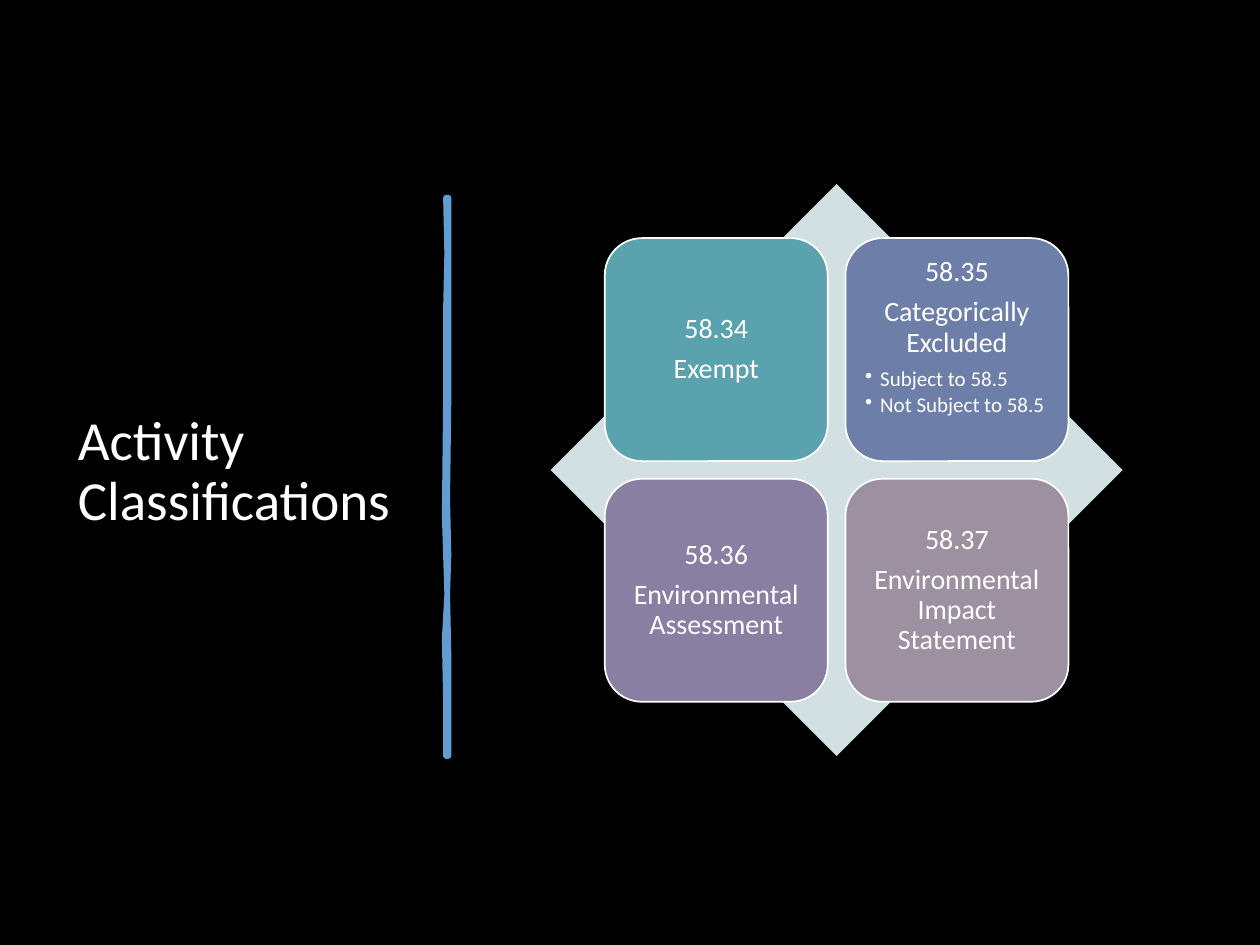
from pptx import Presentation
from pptx.dml.color import RGBColor
from pptx.enum.shapes import MSO_SHAPE
from pptx.enum.text import MSO_ANCHOR, PP_ALIGN
from pptx.oxml import parse_xml
from pptx.oxml.ns import nsdecls
from pptx.util import Inches, Pt

FONT = "Calibri"
WHITE = "FFFFFF"

# Number, name, bullets, fill; in reading order
ACTIVITIES = [
    ("58.34", "Exempt", [], "5AA2AE"),
    ("58.35", "Categorically Excluded",
     ["Subject to 58.5", "Not Subject to 58.5"], "6D7FA8"),
    ("58.36", "Environmental Assessment", [], "887FA3"),
    ("58.37", "Environmental Impact Statement", [], "9D90A0"),
]

# Hand-drawn rule: outline as (offset from the centre, share of the height)
RULE_OUTLINE = [
    (0.01, 0), (0.01, 0.18), (0.01, 0.36), (0, 0.54), (0.01, 0.64),
    (0, 0.71), (0.01, 0.82), (0.01, 1),
    (-0.01, 1), (-0.01, 0.9), (-0.02, 0.79), (0, 0.71), (-0.02, 0.57),
    (-0.01, 0.36), (-0.01, 0.2), (0, 0.1), (-0.01, 0),
]


def color(value):
    return RGBColor.from_string(value)


def paint(shape, fill, line=None, weight=1):
    shape.shadow.inherit = False
    shape.fill.solid()
    shape.fill.fore_color.rgb = color(fill)
    if line:
        shape.line.color.rgb = color(line)
        shape.line.width = Pt(weight)
    else:
        shape.line.fill.background()


def write(para, text, size, align=PP_ALIGN.LEFT, after=0):
    para.alignment = align
    para.line_spacing = 0.9
    para.space_after = Pt(after)
    span = para.add_run()
    span.text = text
    span.font.size = Pt(size)
    span.font.name = FONT
    span.font.color.rgb = color(WHITE)


def add_bullet(para):
    props = para._p.get_or_add_pPr()
    props.set("marL", str(Inches(0.12)))
    props.set("indent", str(Inches(-0.12)))
    props.append(parse_xml(f'<a:buChar {nsdecls("a")} char="•"/>'))


def add_title(page, left, top, width, height):
    box = page.shapes.add_textbox(
        Inches(left), Inches(top), Inches(width), Inches(height))
    frame = box.text_frame
    frame.word_wrap = True
    frame.vertical_anchor = MSO_ANCHOR.MIDDLE
    write(frame.paragraphs[0], "Activity Classifications", 31.5)


def add_rule(page, center, top, height):
    points = [(Inches(center + offset), Inches(top + share * height))
              for offset, share in RULE_OUTLINE]
    builder = page.shapes.build_freeform(*points[0])
    builder.add_line_segments(points[1:], close=True)
    paint(builder.convert_to_shape(), "629DD1", "629DD1", 3.25)


def add_card(group, left, top, size, activity):
    number, name, bullets, fill = activity
    card = group.shapes.add_shape(
        MSO_SHAPE.ROUNDED_RECTANGLE,
        Inches(left), Inches(top), Inches(size), Inches(size))
    paint(card, fill, WHITE)
    frame = card.text_frame
    frame.word_wrap = True
    frame.vertical_anchor = MSO_ANCHOR.TOP if bullets else MSO_ANCHOR.MIDDLE
    frame.margin_left = frame.margin_right = Inches(0.07)
    frame.margin_top = frame.margin_bottom = Inches(0.07)
    write(frame.paragraphs[0], number, 16, PP_ALIGN.CENTER, 5.6)
    write(frame.add_paragraph(), name, 16, PP_ALIGN.CENTER, 5.6)
    for text in bullets:
        para = frame.add_paragraph()
        para.level = 1
        write(para, text, 12, after=1.8)
        add_bullet(para)


def add_matrix(page, left, top, size):
    group = page.shapes.add_group_shape()
    diamond = group.shapes.add_shape(
        MSO_SHAPE.DIAMOND,
        Inches(left), Inches(top), Inches(size), Inches(size))
    paint(diamond, "D2E0E3")

    # Two by two cards, centred on the diamond
    card_size, gap = 1.77, 0.14
    margin = (size - 2 * card_size - gap) / 2
    for index, activity in enumerate(ACTIVITIES):
        row, column = divmod(index, 2)
        add_card(group,
                 left + margin + column * (card_size + gap),
                 top + margin + row * (card_size + gap),
                 card_size, activity)


def main():
    deck = Presentation()
    deck.slide_width, deck.slide_height = Inches(10), Inches(7.5)
    page = deck.slides.add_slide(deck.slide_layouts[6])
    page.background.fill.solid()
    page.background.fill.fore_color.rgb = color("000000")

    add_title(page, 0.52, 1.46, 2.8, 4.58)
    add_rule(page, 3.55, 1.57, 4.43)
    add_matrix(page, 4.37, 1.46, 4.54)
    deck.save("out.pptx")


if __name__ == "__main__":
    main()
